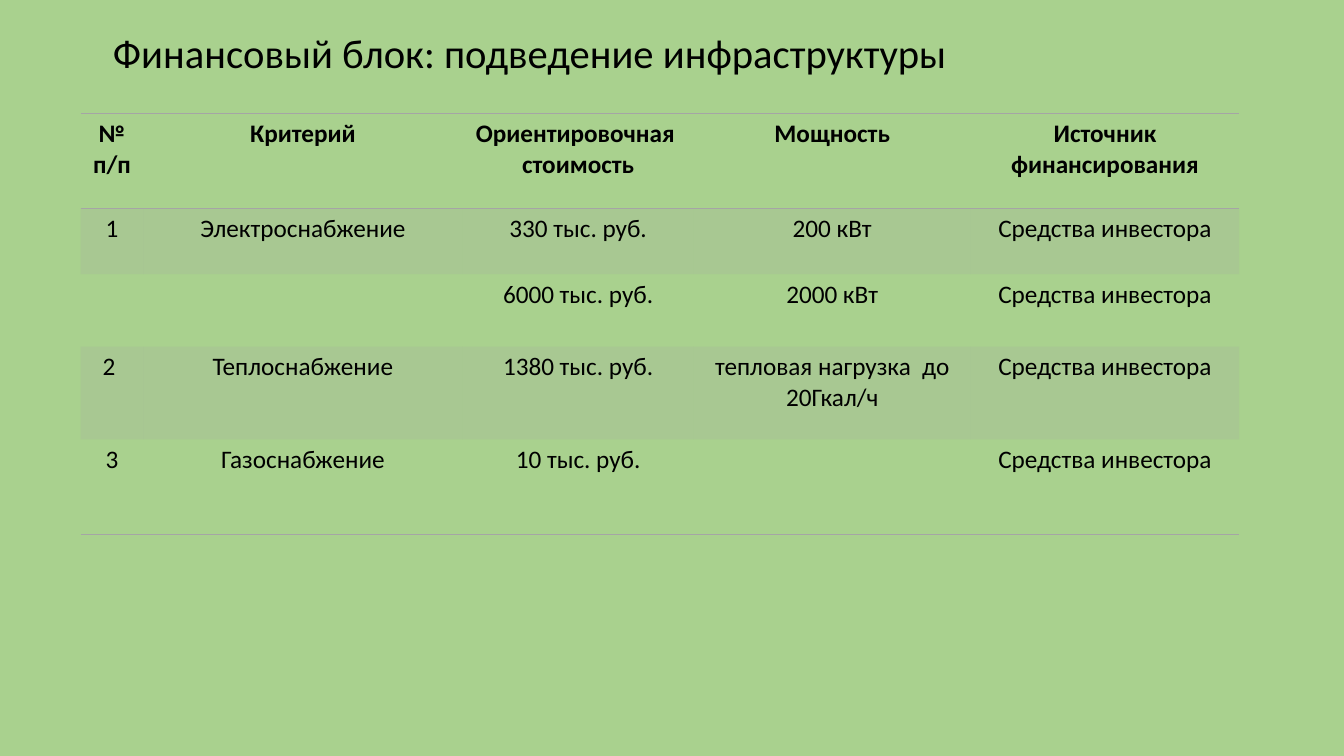
from dataclasses import dataclass

from lxml import etree
from pptx import Presentation
from pptx import util as u
from pptx.dml.color import RGBColor
from pptx.enum import text
from pptx.oxml import ns
from pptx.slide import Slide
from pptx.table import Table, _Cell

GREEN = RGBColor(0xA9, 0xD1, 0x8E)
GREY = RGBColor(0xA5, 0xA5, 0xA5)
BLACK = RGBColor(0, 0, 0)
FONT = "Calibri"
PLAIN_STYLE = "{2D5ABB26-0587-4C30-8999-92F81FD0307C}"
COLUMN_WIDTHS = (0.62, 3.17, 2.29, 2.75, 2.66)
INVESTOR = "Средства инвестора"


@dataclass(frozen=True)
class Row:
    height: float
    texts: tuple[str, ...]
    bold: bool = False
    shaded: bool = False
    borders: tuple[str, ...] = ()


ROWS = (
    Row(0.94, ("№ п/п", "Критерий", "Ориентировочная \nстоимость", "Мощность",
               "Источник финансирования"), bold=True, borders=("lnT", "lnB")),
    Row(0.65, ("1", "Электроснабжение", "330 тыс. руб.", "200 кВт", INVESTOR), shaded=True),
    Row(0.72, ("", "", "6000 тыс. руб.", "2000 кВт", INVESTOR)),
    Row(0.92, ("2 ", "Теплоснабжение", "1380 тыс. руб.",
               "тепловая нагрузка  до 20Гкал/ч", INVESTOR), shaded=True),
    Row(0.94, ("3", "Газоснабжение", "10 тыс. руб.", "", INVESTOR), borders=("lnB",)),
)


def add_border(cell: _Cell, side: str) -> None:
    properties = cell._tc.get_or_add_tcPr()
    line = etree.SubElement(properties, ns.qn(f"a:{side}"), w=str(u.Pt(1)))
    fill = etree.SubElement(line, ns.qn("a:solidFill"))
    etree.SubElement(fill, ns.qn("a:srgbClr"), val=str(GREY))


def shade(cell: _Cell) -> None:
    cell.fill.solid()
    cell.fill.fore_color.rgb = GREY
    color = cell._tc.tcPr.find(f".//{ns.qn('a:srgbClr')}")
    etree.SubElement(color, ns.qn("a:alpha"), val="20000")


def fill_cell(cell: _Cell, content: str, row: Row) -> None:
    cell.margin_left = cell.margin_right = u.Inches(0.07)
    cell.text = content
    for para in cell.text_frame.paragraphs:
        para.alignment = text.PP_ALIGN.CENTER
        para.font.name = FONT
        para.font.size = u.Pt(18)
        para.font.bold = row.bold
        para.font.color.rgb = BLACK
    for side in row.borders:
        add_border(cell, side)
    if row.shaded:
        shade(cell)
    else:
        cell.fill.background()


def fill_table(table: Table) -> None:
    table._tbl.tblPr.find(ns.qn("a:tableStyleId")).text = PLAIN_STYLE
    table.first_row = table.horz_banding = False
    for column, width in zip(table.columns, COLUMN_WIDTHS):
        column.width = u.Inches(width)
    for table_row, row in zip(table.rows, ROWS):
        table_row.height = u.Inches(row.height)
        for cell, content in zip(table_row.cells, row.texts):
            fill_cell(cell, content, row)


def set_title(page: Slide) -> None:
    title = page.shapes.title
    title.left, title.top = u.Inches(1.02), u.Inches(0.13)
    title.width, title.height = u.Inches(11.5), u.Inches(0.84)
    frame = title.text_frame
    frame.text = "Финансовый блок: подведение инфраструктуры"
    frame.auto_size = text.MSO_AUTO_SIZE.NONE
    frame.vertical_anchor = text.MSO_ANCHOR.MIDDLE
    para = frame.paragraphs[0]
    para.alignment = text.PP_ALIGN.LEFT
    para.line_spacing = 0.9
    para.font.name = FONT
    para.font.size = u.Pt(29)
    para.font.color.rgb = BLACK


def main() -> None:
    deck = Presentation()
    deck.slide_width, deck.slide_height = u.Inches(13.33), u.Inches(7.5)
    page = deck.slides.add_slide(deck.slide_layouts[5])
    page.background.fill.solid()
    page.background.fill.fore_color.rgb = GREEN
    set_title(page)
    frame = page.shapes.add_table(
        len(ROWS), len(COLUMN_WIDTHS), u.Inches(0.8), u.Inches(1.13),
        u.Inches(sum(COLUMN_WIDTHS)), u.Inches(sum(row.height for row in ROWS)))
    fill_table(frame.table)
    deck.save("out.pptx")


if __name__ == "__main__":
    main()
